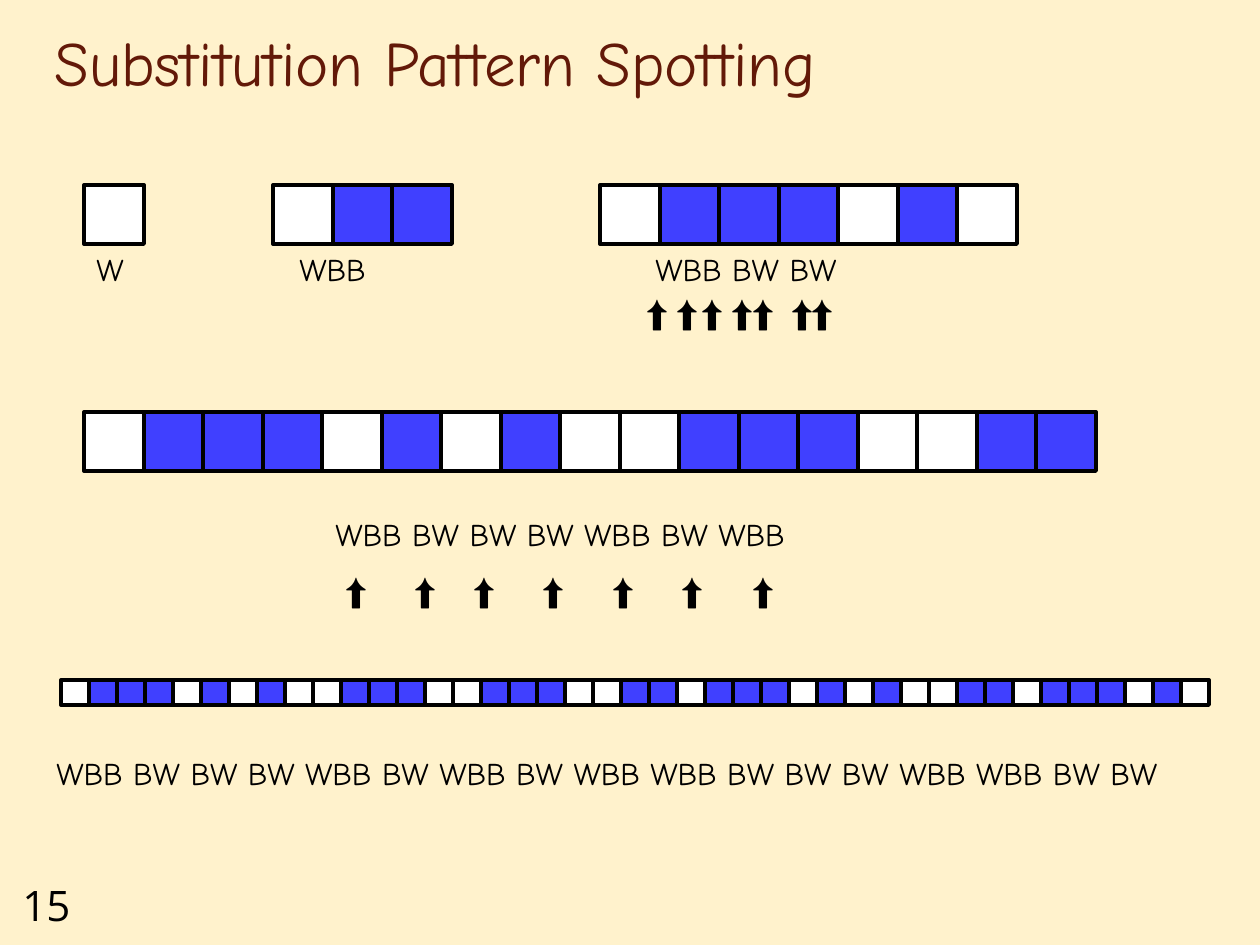
from dataclasses import dataclass

import pptx
import pptx.dml.color
import pptx.enum.shapes
import pptx.enum.text
import pptx.util

RGB = pptx.dml.color.RGBColor
ANCHOR = pptx.enum.text.MSO_ANCHOR
FIT = pptx.enum.text.MSO_AUTO_SIZE

CREAM = RGB(0xFF, 0xF2, 0xCC)
MAROON = RGB(0x63, 0x19, 0x08)
BLACK = RGB(0, 0, 0)
TILES = {"W": RGB(0xFF, 0xFF, 0xFF), "B": RGB(0x40, 0x40, 0xFF)}
RULES = {"W": "WBB", "B": "BW"}
COMIC = "Comic Neue"
SCALE = 914400 / 126  # EMU in one px


@dataclass
class Box:
    left: int
    top: int
    width: int
    height: int

    def emu(self) -> list[int]:
        sides = (self.left, self.top, self.width, self.height)
        return [round(side * SCALE) for side in sides]


@dataclass
class Style:
    size: int
    font: str = COMIC
    color: RGB = BLACK
    wrap: bool = True
    grow: bool = True
    anchor: ANCHOR = ANCHOR.TOP


@dataclass
class Stage:
    strip: Box
    label: Box | None
    group: bool = False


LABEL = Style(18, wrap=False)
ARROW = Style(20)

# One stage for each step of the substitution
STAGES = [
    Stage(Box(84, 185, 60, 59), Box(84, 244, 57, 50)),
    Stage(Box(273, 185, 179, 59), Box(287, 244, 95, 50)),
    Stage(Box(600, 185, 417, 59), Box(643, 244, 217, 50)),
    Stage(Box(84, 412, 1012, 59), Box(323, 509, 495, 50)),
    Stage(Box(61, 680, 1148, 25), Box(44, 748, 1174, 50), group=True),
]
# Top of each arrow row, with the left edges of its arrows
ARROWS = {
    284: (634, 664, 689, 719, 740, 779, 799),
    562: (333, 402, 461, 530, 600, 669, 740),
}


def write(slide: pptx.slide.Slide, box: Box, text: str, style: Style) -> None:
    frame = slide.shapes.add_textbox(*box.emu()).text_frame
    frame.word_wrap = style.wrap
    frame.auto_size = FIT.SHAPE_TO_FIT_TEXT if style.grow else FIT.NONE
    frame.vertical_anchor = style.anchor
    run = frame.paragraphs[0].add_run()
    run.text = text
    run.font.name = style.font
    run.font.size = pptx.util.Pt(style.size)
    run.font.color.rgb = style.color


def draw_strip(slide: pptx.slide.Slide, stage: Stage, code: str) -> None:
    shapes = slide.shapes
    if stage.group:
        shapes = shapes.add_group_shape().shapes
    strip = stage.strip
    pitch = strip.width / len(code)
    for i, mark in enumerate(code):
        left = strip.left + round(i * pitch)
        box = Box(left, strip.top, round(pitch), strip.height)
        tile = shapes.add_shape(
            pptx.enum.shapes.MSO_SHAPE.RECTANGLE, *box.emu())
        tile.shadow.inherit = False
        tile.fill.solid()
        tile.fill.fore_color.rgb = TILES[mark]
        tile.line.color.rgb = BLACK
        tile.line.width = pptx.util.Pt(2.25)


def main() -> None:
    deck = pptx.Presentation()
    deck.slide_width = pptx.util.Inches(10)
    deck.slide_height = pptx.util.Inches(7.5)
    slide = deck.slides.add_slide(deck.slide_layouts[6])
    slide.background.fill.solid()
    slide.background.fill.fore_color.rgb = CREAM

    # Page number and title
    write(slide, Box(10, 873, 95, 63), "15", Style(24, "Open Sans"))
    write(slide, Box(42, 21, 1071, 84), "Substitution Pattern Spotting",
          Style(36, color=MAROON, grow=False, anchor=ANCHOR.BOTTOM))

    # Strips and labels: each step replaces every letter by its rule
    words = ["W"]
    for stage in STAGES:
        code = "".join(words)
        draw_strip(slide, stage, code)
        write(slide, stage.label, " ".join(words), LABEL)
        words = [RULES[mark] for mark in code]

    # Arrows under the third and fourth labels
    for top, lefts in ARROWS.items():
        for left in lefts:
            write(slide, Box(left, top, 49, 55), "⬆", ARROW)

    deck.save("out.pptx")


if __name__ == "__main__":
    main()
